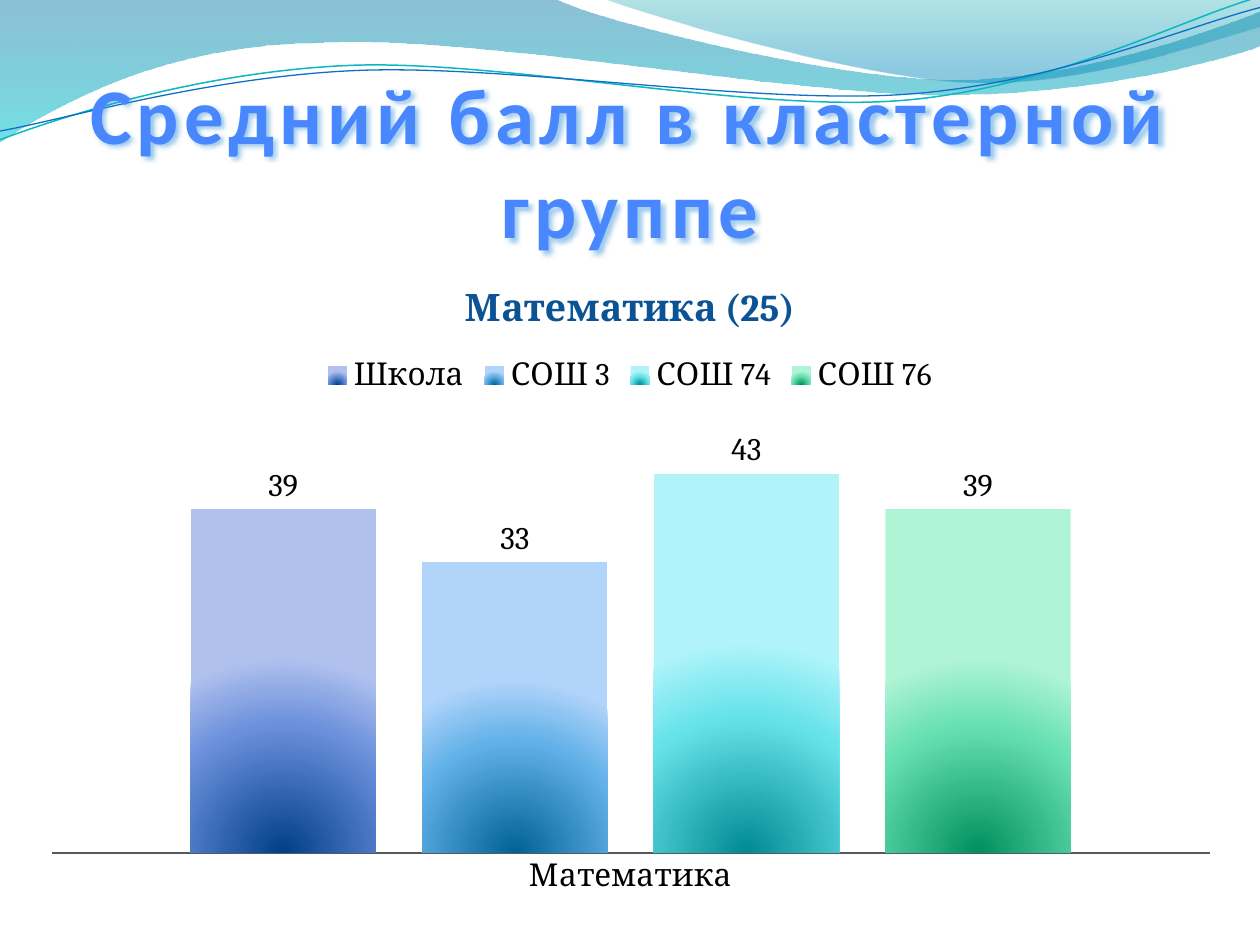
import pptx
import pptx.chart.data
import pptx.dml.color
import pptx.enum.chart
import pptx.enum.text
import pptx.oxml
import pptx.util
from pptx.util import Inches

HEX = {
    "title": "4987FF", "glow": "3C96DC", "head": "0B5394", "text": "000000",
    "axis": "595959", "teal": "0AB8BF", "blue": "0F6FC6",
}
TITLE = "Средний балл в кластерной группе"
HEAD = "Математика (25)"
CATS = ["Математика"]
BARS = [
    ("Школа", 39, ("003F87", "6A8FDB", "B0C1EE")),
    ("СОШ 3", 33, ("006295", "62B1E8", "B0D4FA")),
    ("СОШ 74", 43, ("008A92", "66E2EA", "B0F4FA")),
    ("СОШ 76", 39, ("008F5E", "66E0B2", "B0F4D6")),
]
STOPS = (0, 65, 100)
WIDE, HIGH = 9.58, 5.18
PLOT = {"x": 0.2 / WIDE, "y": 1.24 / HIGH, "w": 9.19 / WIDE, "h": 3.5 / HIGH}
WAVES = [
    ([(0, -0.01), (4.4, -0.01), (4.76, 0.17, 6.64, 0.63, 7.58, 0.63),
      (8.53, 0.63, 9.58, 0.26, 10, 0.09), (10.01, 0.36),
      (9.83, 0.44, 8.7, 0.76, 7.46, 0.75), (6.22, 0.75, 3.82, 0.28, 2.57, 0.34),
      (1.29, 0.35, 0.46, 0.83, -0.01, 1.13), (0, -0.01)],
     [(0, "0074A1", 45), (100, "00C6CF", 55)]),
    ([(4.79, -0.01), (5.09, 0.11, 6.82, 0.62, 7.69, 0.65),
      (8.56, 0.69, 9.61, 0.32, 10, 0.21), (10, 0), (4.79, -0.01)],
     [(0, "00A1A9", 30), (80, "008BBF", 45)]),
]
LINES = [
    ([(0, 1.11), (0.48, 0.93, 1.58, 0.57, 2.77, 0.52),
      (3.95, 0.47, 5.93, 0.89, 7.13, 0.8), (8.33, 0.71, 9.38, 0.15, 9.98, -0.02)],
     "teal", 0.85),
    ([(0, 1.04), (0.47, 0.96, 1.64, 0.61, 2.83, 0.56),
      (4.03, 0.51, 5.97, 0.83, 7.17, 0.75), (8.36, 0.67, 9.41, 0.21, 10, 0.06)],
     "blue", 0.75),
]
NS = ('xmlns:a="http://schemas.openxmlformats.org/drawingml/2006/main" '
      'xmlns:c="http://schemas.openxmlformats.org/drawingml/2006/chart"')
DOWN = '<a:lin ang="5400000" scaled="0"/>'
ROUND = ('<a:path path="circle"><a:fillToRect l="50000" t="100000" '
         'r="50000" b="0"/></a:path>')


def rgb(name):
    return pptx.dml.color.RGBColor.from_string(HEX[name])


def node(text):
    head, tail = text.split(">", 1)
    return pptx.oxml.parse_xml(f"{head} {NS}>{tail}")


def grad(stops, kind):
    body = "".join(
        f'<a:gs pos="{pos * 1000}"><a:srgbClr val="{tint}">'
        f'<a:alpha val="{alpha * 1000}"/></a:srgbClr></a:gs>'
        for pos, tint, alpha in stops)
    return node(f'<a:gradFill><a:gsLst>{body}</a:gsLst>{kind}</a:gradFill>')


def paint(fill, props, stops, kind):
    fill.background()
    blank = props.find(pptx.oxml.ns.qn("a:noFill"))
    props.replace(blank, grad(stops, kind))


def draw(slide, steps, close):
    spots = [(Inches(step[i]), Inches(step[i + 1]))
             for step in steps for i in range(0, len(step), 2)]
    pen = slide.shapes.build_freeform(*spots[0])
    pen.add_line_segments(spots[1:], close=close)
    shape = pen.convert_to_shape()
    shape.shadow.inherit = False
    segs = iter(list(shape._element.spPr.iter(pptx.oxml.ns.qn("a:lnTo"))))
    for step in steps[1:]:
        seg = next(segs)
        if len(step) == 2:
            continue
        curve = node("<a:cubicBezTo></a:cubicBezTo>")
        seg.addprevious(curve)
        for part in (seg, next(segs), next(segs)):
            curve.append(part[0])
            part.getparent().remove(part)
    return shape


def add_waves(slide):
    for steps, stops in WAVES:
        shape = draw(slide, steps, True)
        shape.line.fill.background()
        paint(shape.fill, shape._element.spPr, stops, DOWN)
    for steps, tint, width in LINES:
        shape = draw(slide, steps, False)
        shape.fill.background()
        shape.line.color.rgb = rgb(tint)
        shape.line.width = pptx.util.Pt(width)


def add_title(slide):
    box = slide.shapes.add_textbox(Inches(0.5), Inches(0.77), Inches(9), Inches(1.25))
    frame = box.text_frame
    frame.word_wrap = True
    frame.vertical_anchor = pptx.enum.text.MSO_ANCHOR.BOTTOM
    frame.margin_left = frame.margin_right = frame.margin_bottom = 0
    frame.margin_top = Inches(0.05)
    para = frame.paragraphs[0]
    para.alignment = pptx.enum.text.PP_ALIGN.CENTER
    run = para.add_run()
    run.text = TITLE
    run.font.name = "Calibri"
    run.font.size = pptx.util.Pt(45)
    run.font.bold = True
    run.font.color.rgb = rgb("title")
    run._r.get_or_add_rPr().set("spc", "300")
    box._element.spPr.append(node(
        '<a:effectLst><a:outerShdw blurRad="25400" dist="25400" dir="2700000">'
        f'<a:srgbClr val="{HEX["glow"]}"><a:alpha val="50000"/></a:srgbClr>'
        '</a:outerShdw></a:effectLst>'))


def add_bars(slide):
    data = pptx.chart.data.CategoryChartData()
    data.categories = CATS
    for name, value, _ in BARS:
        data.add_series(name, [value])
    chart = slide.shapes.add_chart(
        pptx.enum.chart.XL_CHART_TYPE.COLUMN_CLUSTERED,
        Inches(0.21), Inches(2.03), Inches(WIDE), Inches(HIGH), data).chart
    chart.font.name = "Cambria"
    chart.font.size = pptx.util.Pt(18)
    chart.font.color.rgb = rgb("text")

    run = chart.chart_title.text_frame.paragraphs[0].add_run()
    run.text = HEAD
    run.font.name = "Cambria"
    run.font.size = pptx.util.Pt(21.6)
    run.font.bold = True
    run.font.color.rgb = rgb("head")
    chart.chart_title.include_in_layout = False

    chart.has_legend = True
    chart.legend.position = pptx.enum.chart.XL_LEGEND_POSITION.TOP
    chart.legend.include_in_layout = False

    axis = chart.value_axis
    axis.visible = False
    axis.has_major_gridlines = False
    axis.minimum_scale = 0
    axis.maximum_scale = 50
    axis = chart.category_axis
    axis.major_tick_mark = pptx.enum.chart.XL_TICK_MARK.NONE
    axis.format.line.color.rgb = rgb("axis")
    axis.format.line.width = pptx.util.Pt(0.75)

    plot = chart.plots[0]
    plot.gap_width = 150
    plot.overlap = -25
    plot.vary_by_categories = False
    for series, (_, _, tints) in zip(plot.series, BARS):
        stops = [(pos, tint, 100) for pos, tint in zip(STOPS, tints)]
        paint(series.format.fill, series._element.spPr, stops, ROUND)
        series.data_labels.show_value = True
        series.data_labels.position = pptx.enum.chart.XL_LABEL_POSITION.OUTSIDE_END

    area = chart._chartSpace.chart.plotArea
    for old in area.findall(pptx.oxml.ns.qn("c:layout")):
        area.remove(old)
    sides = "".join(f'<c:{key} val="{value:.4f}"/>' for key, value in PLOT.items())
    area.insert(0, node(
        '<c:layout><c:manualLayout><c:layoutTarget val="inner"/>'
        '<c:xMode val="edge"/><c:yMode val="edge"/>'
        f'{sides}</c:manualLayout></c:layout>'))


def main():
    deck = pptx.Presentation()
    deck.slide_width = Inches(10)
    deck.slide_height = Inches(7.5)
    slide = deck.slides.add_slide(deck.slide_layouts[6])
    add_waves(slide)
    add_title(slide)
    add_bars(slide)
    deck.save("out.pptx")


if __name__ == "__main__":
    main()
